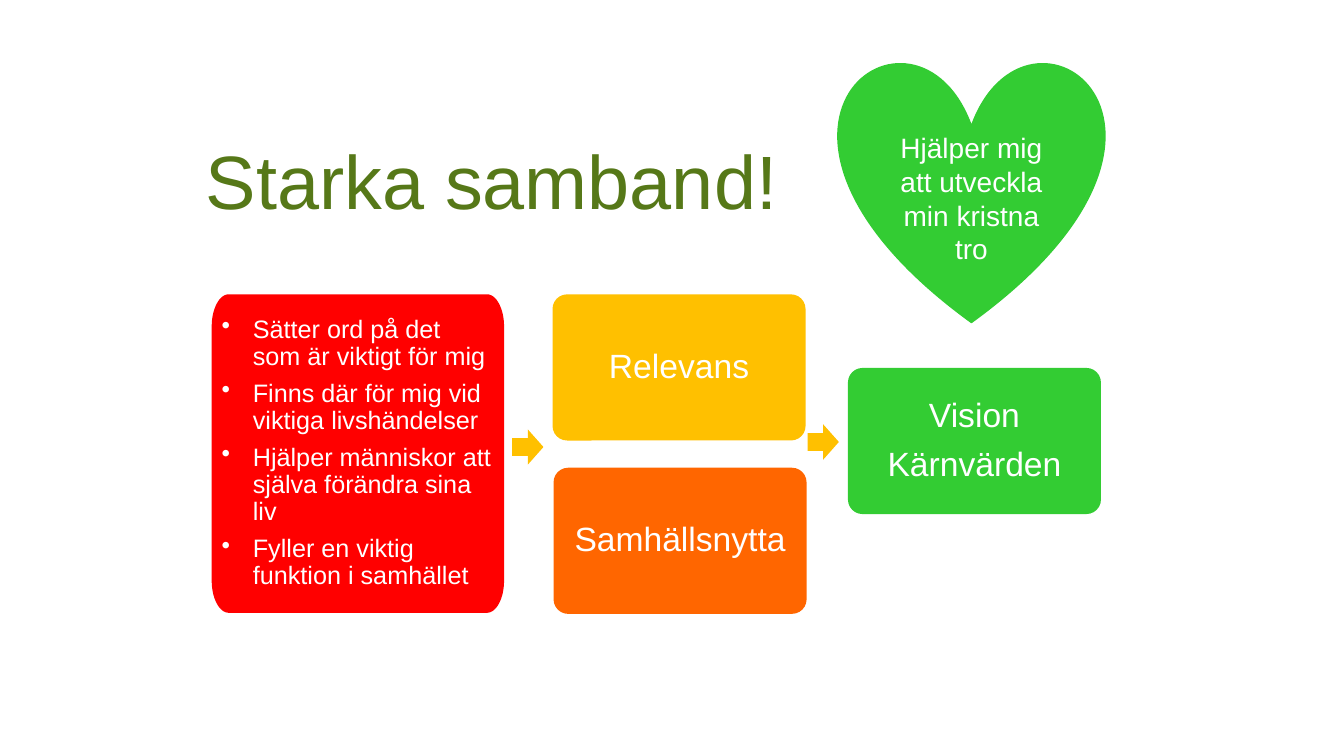
from math import cos, pi, sin

from lxml.etree import SubElement
from pptx import Presentation
from pptx.dml.color import RGBColor
from pptx.enum.shapes import MSO_SHAPE as Shape
from pptx.enum.text import MSO_ANCHOR as Anchor, PP_ALIGN as Align
from pptx.oxml.ns import qn
from pptx.util import Inches, Pt

FONT = "Arial"
WHITE, OLIVE, RED = "FFFFFF", "567818", "FF0000"
YELLOW, ORANGE, GREEN = "FFC000", "FF6600", "33CC33"


def color(hex_code):
    return RGBColor.from_string(hex_code)


class SlideBuilder:
    """Holds the style and the current slide."""

    def __init__(self, presentation):
        self.slide = presentation.slides.add_slide(presentation.slide_layouts[5])

    def paint(self, shape, fill):
        shape.shadow.inherit = False
        shape.fill.solid()
        shape.fill.fore_color.rgb = color(fill)
        shape.line.fill.background()
        return shape

    def set_text(self, shape, lines, size, text_color=WHITE, align=Align.CENTER,
                 spacing=0.9, gap=0, inset=0.1, anchor=Anchor.MIDDLE, bullets=False):
        frame = shape.text_frame
        frame.word_wrap = True
        frame.vertical_anchor = anchor
        frame.margin_left = frame.margin_right = Inches(inset)
        frame.margin_top = frame.margin_bottom = Inches(0.05)
        frame.text = "\n".join(lines)
        for paragraph in frame.paragraphs:
            if bullets:
                properties = paragraph._p.get_or_add_pPr()
                properties.set("marL", str(Inches(0.31)))
                properties.set("indent", str(-Inches(0.31)))
                SubElement(properties, qn("a:buChar")).set("char", "•")
            paragraph.alignment = align
            paragraph.line_spacing = spacing
            paragraph.space_before = Pt(0)
            paragraph.space_after = Pt(gap * size)
            for run in paragraph.runs:
                run.font.name = FONT
                run.font.size = Pt(size)
                run.font.color.rgb = color(text_color)

    def title(self, text, left, top, width, height):
        title = self.slide.shapes.title
        title.left, title.top = Inches(left), Inches(top)
        title.width, title.height = Inches(width), Inches(height)
        self.set_text(title, [text], 54, OLIVE, Align.LEFT, spacing=0.8)

    def shape(self, kind, left, top, width, height, fill):
        shape = self.slide.shapes.add_shape(
            kind, Inches(left), Inches(top), Inches(width), Inches(height))
        return self.paint(shape, fill)

    def box(self, left, top, fill, lines):
        box = self.shape(Shape.ROUNDED_RECTANGLE, left, top, 2.51, 1.45, fill)
        box.adjustments[0] = 0.1
        self.set_text(box, lines, 24, gap=0.38, inset=0.06)

    def arrow(self, left, top):
        self.shape(Shape.RIGHT_ARROW, left, top, 0.31, 0.35, YELLOW)

    def panel(self, left, top, width, height, fill, lines):
        """Panel with elliptical corners, taller than they are wide."""
        radius_x, radius_y, steps = 0.17, 0.32, 16
        right, bottom = left + width - radius_x, top + height - radius_y
        centers = [(right, bottom), (left + radius_x, bottom),
                   (left + radius_x, top + radius_y), (right, top + radius_y)]
        points = []
        for quarter, (x, y) in enumerate(centers):
            for step in range(steps + 1):
                angle = (quarter + step / steps) * pi / 2
                points.append((Inches(x + radius_x * cos(angle)),
                               Inches(y + radius_y * sin(angle))))
        builder = self.slide.shapes.build_freeform(*points[0])
        builder.add_line_segments(points[1:], close=True)
        panel = self.paint(builder.convert_to_shape(), fill)
        self.set_text(panel, lines, 18, align=Align.LEFT, gap=0.38, bullets=True)

    def heart(self, left, top, width, height, fill, text):
        heart = self.shape(Shape.HEART, left, top, width, height, fill)
        heart.line.color.rgb = color(fill)
        heart.line.width = Pt(1)
        self.set_text(heart, [text], 20, spacing=1.0, anchor=Anchor.TOP)


def main():
    presentation = Presentation()
    presentation.slide_width = Inches(13.33)
    presentation.slide_height = Inches(7.5)
    builder = SlideBuilder(presentation)

    # Title
    builder.title("Starka samband!", 1.94, 1.31, 9.2, 1.1)

    # Reasons
    builder.panel(2.1, 2.92, 2.9, 3.16, RED, [
        "Sätter ord på det som är viktigt för mig",
        "Finns där för mig vid viktiga livshändelser",
        "Hjälper människor att själva förändra sina liv",
        "Fyller en viktig funktion i samhället",
    ])

    # Effects and goal
    builder.box(5.49, 4.64, ORANGE, ["Samhällsnytta"])
    builder.box(5.48, 2.92, YELLOW, ["Relevans"])
    builder.box(8.41, 3.65, GREEN, ["Vision", "Kärnvärden"])

    # Arrows between the columns
    builder.arrow(5.08, 4.26)
    builder.arrow(8.01, 4.21)

    # Heart
    builder.heart(8.32, 0.6, 2.63, 2.6, GREEN,
                  "Hjälper mig att utveckla min kristna tro")

    presentation.save("out.pptx")


if __name__ == "__main__":
    main()
